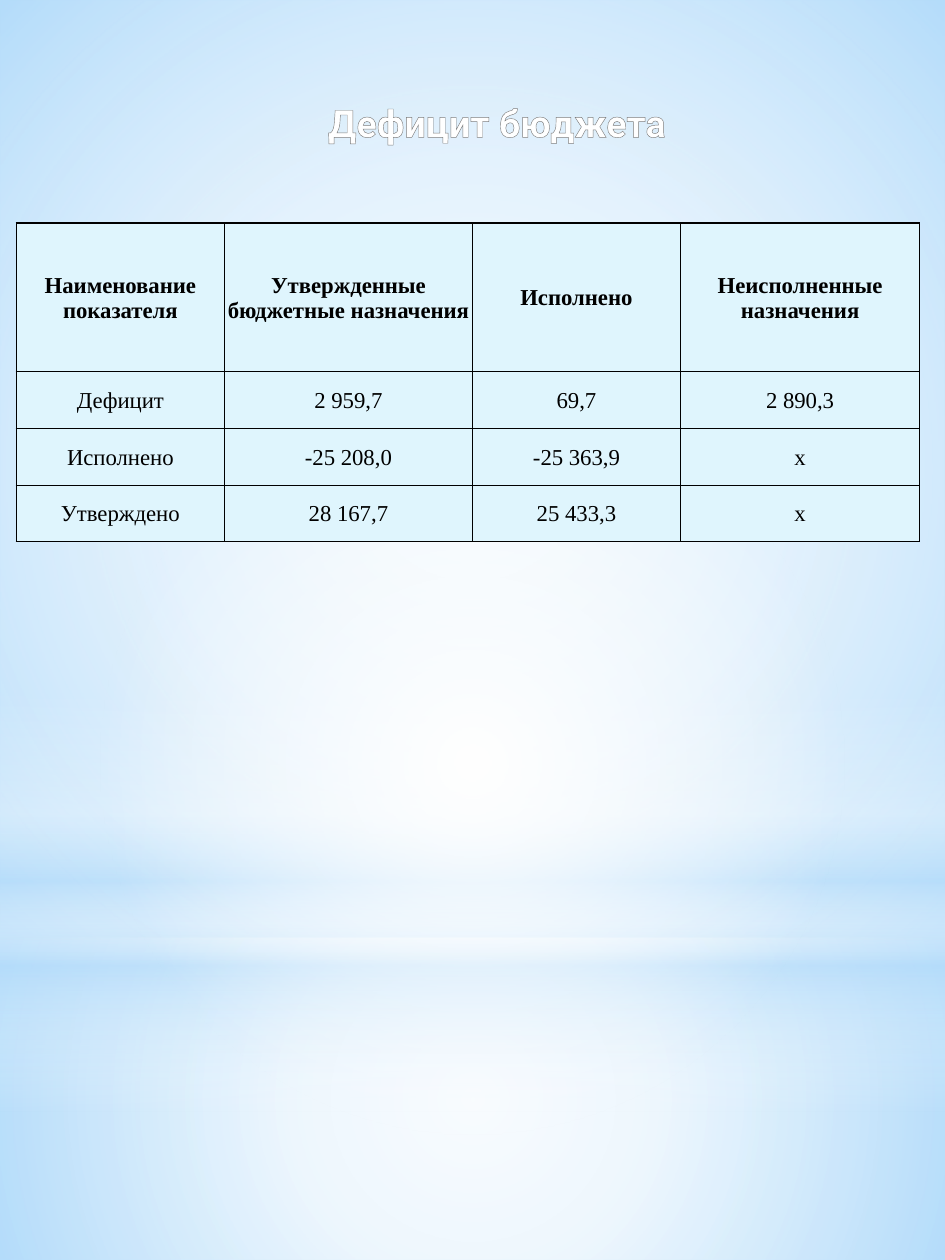
from lxml.etree import SubElement
from pptx import Presentation
from pptx.dml.color import RGBColor
from pptx.enum.shapes import MSO_SHAPE
from pptx.enum.text import MSO_ANCHOR, MSO_AUTO_SIZE, PP_ALIGN
from pptx.oxml import parse_xml
from pptx.oxml.ns import nsdecls, qn
from pptx.util import Inches, Pt

COLORS = {
    "sky": "B4DCFA", "white": "FFFFFF", "gray": "7F7F7F",
    "edge": "7D7D7D", "cell": "DFF5FD", "black": "000000",
}
ROWS = [
    ["Наименование показателя", "Утвержденные бюджетные назначения",
     "Исполнено", "Неисполненные назначения"],
    ["Дефицит", "2 959,7", "69,7", "2 890,3"],
    ["Исполнено", "-25 208,0", "-25 363,9", "х"],
    ["Утверждено", "28 167,7", "25 433,3", "х"],
]
WIDTHS = [1.65, 1.97, 1.65, 1.9]
HEIGHTS = [1.18, 0.45, 0.45, 0.45]


def color(name):
    return RGBColor.from_string(COLORS[name])


def blend(stops, round_=False):
    fill = parse_xml(f'<a:gradFill {nsdecls("a")} rotWithShape="1"/>')
    marks = SubElement(fill, qn("a:gsLst"))
    for place, name, alpha in stops:
        mark = SubElement(marks, qn("a:gs"), pos=str(place * 1000))
        tint = SubElement(mark, qn("a:srgbClr"), val=COLORS[name])
        if alpha < 100:
            SubElement(tint, qn("a:alpha"), val=str(alpha * 1000))
    if round_:
        way = SubElement(fill, qn("a:path"), path="circle")
        sides = dict.fromkeys("ltrb", "50000")
        SubElement(way, qn("a:fillToRect"), **sides)
    else:
        SubElement(fill, qn("a:lin"), ang="5400000", scaled="0")
    return fill


def line(tag, name, width):
    edge = parse_xml(f'<a:{tag} {nsdecls("a")} w="{Pt(width)}"/>')
    fill = SubElement(edge, qn("a:solidFill"))
    SubElement(fill, qn("a:srgbClr"), val=COLORS[name])
    return edge


def add_glow(slide, kind, box, stops, round_=True):
    shape = slide.shapes.add_shape(kind, *map(Inches, box))
    shape.shadow.inherit = False
    shape.line.fill.background()
    shape.fill.background()
    blank = shape.element.spPr.find(qn("a:noFill"))
    blank.getparent().replace(blank, blend(stops, round_))


def add_back(slide, box):
    left, top, width, height = box
    fill = slide.background.fill
    fill.solid()
    fill.fore_color.rgb = color("sky")
    split = 7.44
    add_glow(slide, MSO_SHAPE.RECTANGLE,
             (left, top + split, width, height - split),
             [(0, "white", 91), (37, "white", 76), (100, "sky", 79)])
    add_glow(slide, MSO_SHAPE.RECTANGLE, (left, top, width, split),
             [(0, "white", 89), (48, "white", 62), (100, "sky", 79)])
    add_glow(slide, MSO_SHAPE.RECTANGLE, (left, top + 5.49, width, 3.33),
             [(0, "white", 0), (29, "white", 30), (45, "sky", 40),
              (55, "white", 26), (65, "sky", 60), (100, "white", 0)], False)
    add_glow(slide, MSO_SHAPE.OVAL, (left, top + 2.33, width, split),
             [(0, "white", 100), (56, "white", 0)])


def add_title(slide, box):
    title = slide.shapes.title
    title.left, title.top, title.width, title.height = map(Inches, box)
    title.element.getparent().append(title.element)
    frame = title.text_frame
    frame.word_wrap = True
    frame.auto_size = MSO_AUTO_SIZE.SHAPE_TO_FIT_TEXT
    frame.vertical_anchor = MSO_ANCHOR.TOP
    para = frame.paragraphs[0]
    para.alignment = PP_ALIGN.CENTER
    run = para.add_run()
    run.text = "Дефицит бюджета"
    run.font.name = "Roboto"
    run.font.size = Pt(21.6)
    run.font.bold = True
    run.font.color.rgb = color("white")
    solid = next(title.element.iter(qn("a:solidFill")))
    solid.addprevious(line("ln", "edge", 0.83))
    stops = [(0, "white", 100), (9, "white", 100), (50, "gray", 100),
             (79, "white", 100), (100, "white", 100)]
    solid.getparent().replace(solid, blend(stops))


def fill_cell(cell, text, bold, edges):
    cell.fill.solid()
    cell.fill.fore_color.rgb = color("cell")
    cell.margin_left = cell.margin_right = cell.margin_top = Inches(0.01)
    cell.margin_bottom = 0
    cell.vertical_anchor = MSO_ANCHOR.MIDDLE
    para = cell.text_frame.paragraphs[0]
    para.alignment = PP_ALIGN.CENTER
    run = para.add_run()
    run.text = text
    run.font.name = "Times New Roman"
    run.font.size = Pt(13)
    run.font.bold = bold
    run.font.color.rgb = color("black")
    props = cell._tc.get_or_add_tcPr()
    for spot, (side, width) in enumerate(edges.items()):
        props.insert(spot, line("ln" + side, "black", width))


def add_grid(slide, box):
    rows, cols = len(ROWS), len(WIDTHS)
    frame = slide.shapes.add_table(rows, cols, *map(Inches, box))
    table = frame.table
    for col, width in zip(table.columns, WIDTHS):
        col.width = Inches(width)
    for row, height in zip(table.rows, HEIGHTS):
        row.height = Inches(height)
    for r, texts in enumerate(ROWS):
        for c, text in enumerate(texts):
            edges = {"L": 1 if c == 0 else 0.5,
                     "R": 1 if c == cols - 1 else 0.5,
                     "T": 1 if r == 0 else 0.5, "B": 0.5}
            fill_cell(table.cell(r, c), text, r == 0, edges)


def main():
    deck = Presentation()
    deck.slide_width, deck.slide_height = Inches(7.5), Inches(10)
    slide = deck.slides.add_slide(deck.slide_layouts[5])
    add_back(slide, (0, 0, 7.5, 10))
    add_title(slide, (1.86, 0.74, 4.17, 0.46))
    add_grid(slide, (0.13, 1.77, sum(WIDTHS), sum(HEIGHTS)))
    deck.save("out.pptx")


if __name__ == "__main__":
    main()
